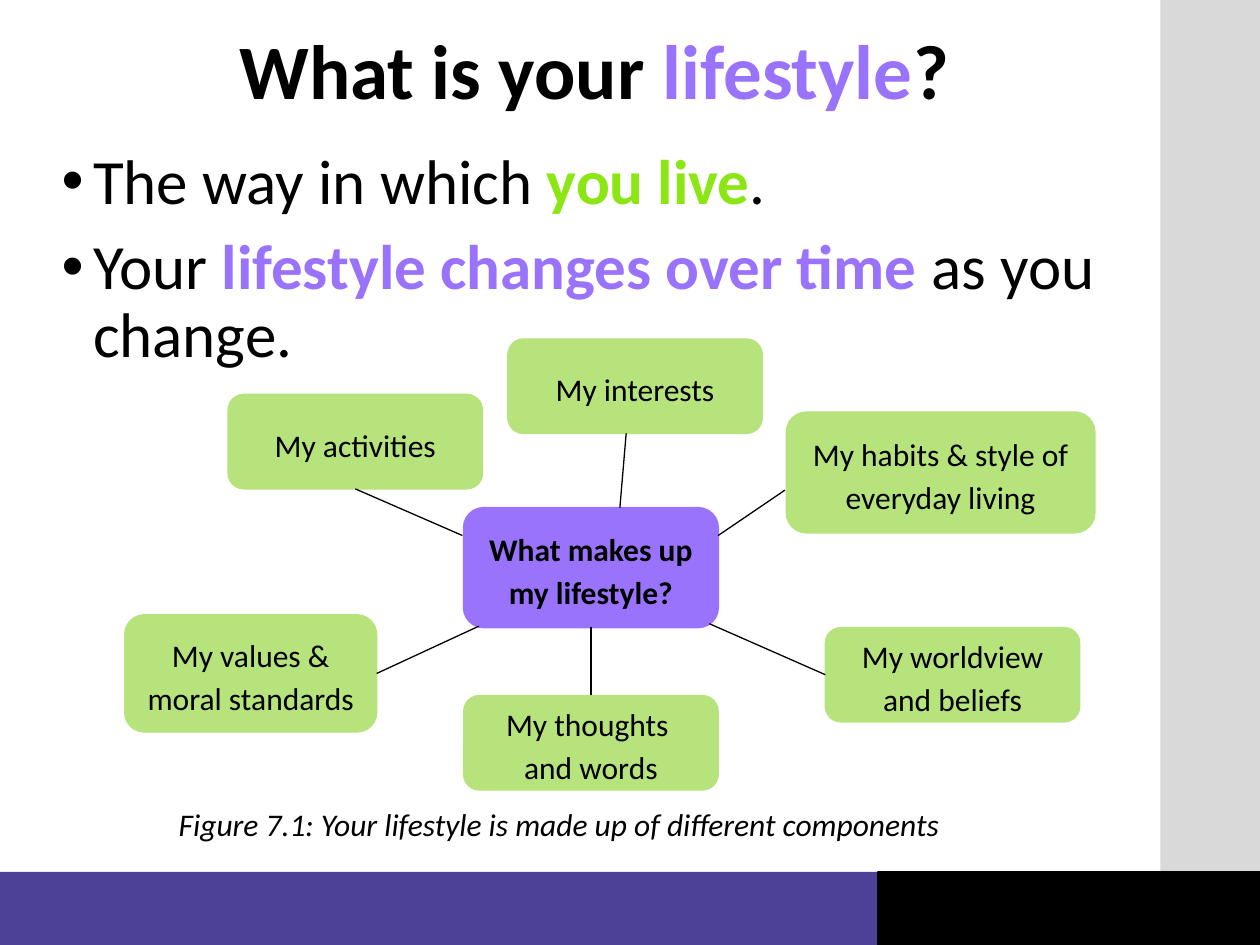
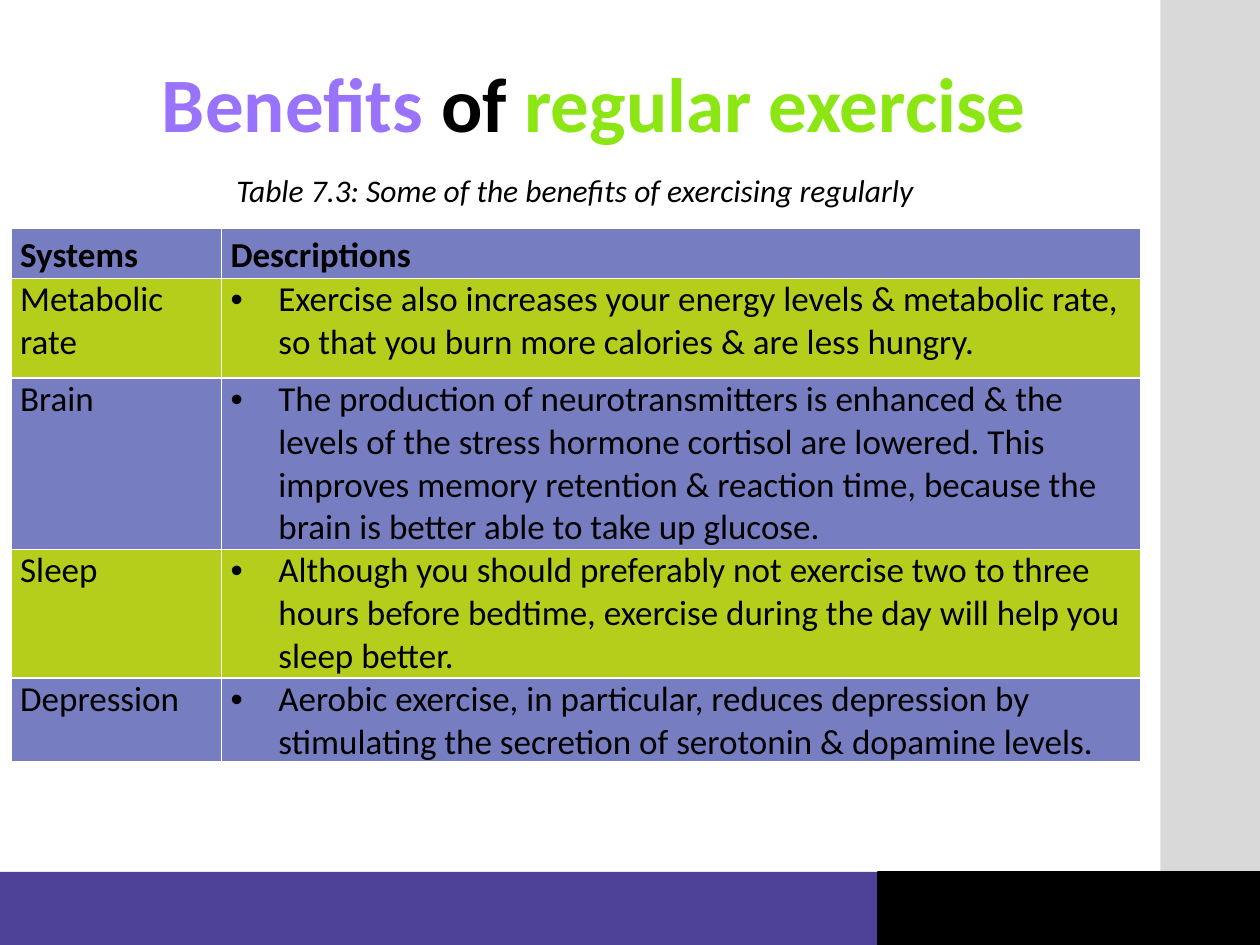
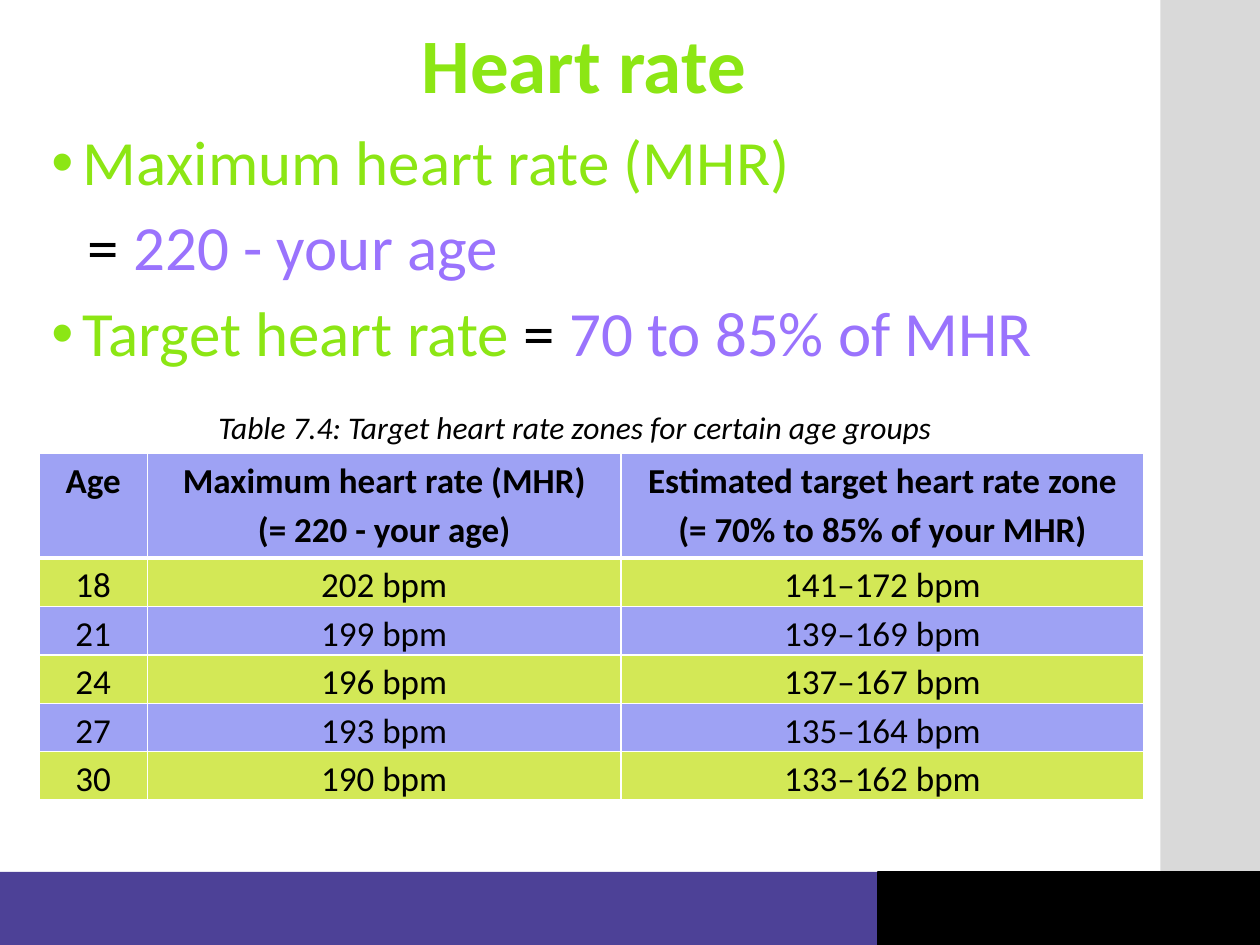
from dataclasses import dataclass

from lxml import etree
from pptx import Presentation
from pptx.dml.color import RGBColor
from pptx.enum.shapes import MSO_CONNECTOR, MSO_SHAPE
from pptx.enum.text import MSO_ANCHOR, PP_ALIGN
from pptx.oxml.ns import qn
from pptx.util import Inches, Pt

LEFT, MID = PP_ALIGN.LEFT, PP_ALIGN.CENTER
TOP, CORE = MSO_ANCHOR.TOP, MSO_ANCHOR.MIDDLE
RECT, ROUND = MSO_SHAPE.RECTANGLE, MSO_SHAPE.ROUNDED_RECTANGLE
LINE = MSO_CONNECTOR.STRAIGHT
NORTH, WEST, SOUTH, EAST = range(4)


@dataclass(frozen=True)
class Theme:
    font: str = "Calibri"
    ink: str = "000000"
    white: str = "FFFFFF"
    grey: str = "D9D9D9"
    band: str = "4D4197"
    violet: str = "9A73FD"
    lime: str = "8CE614"
    leaf: str = "B7E37D"
    dark_rows: tuple = ("767DC0", "B5CE1C")
    light_rows: tuple = ("9EA2F4", "D3E856")
    title: int = 44
    body: int = 36
    cell: int = 20
    note: int = 18


T = Theme()


def rgb(code):
    return RGBColor.from_string(code)


def inches(*sizes):
    return [Inches(size) for size in sizes]


def indent(para, left, bullet):
    props = para._p.get_or_add_pPr()
    props.set("marL", str(Inches(left)))
    props.set("indent", str(-Inches(left) if bullet else 0))
    if bullet:
        etree.SubElement(props, qn("a:buFont"), typeface="Arial")
        etree.SubElement(props, qn("a:buChar"), char="•")


def write(para, text, size, bold=False, italic=False, align=LEFT,
          space=1.0, left=0, bullet=False):
    """Fill a paragraph with a string or with (text, colour[, bold]) runs."""
    if left:
        indent(para, left, bullet)
    para.alignment, para.line_spacing = align, space
    font = para.font
    font.name, font.size = T.font, Pt(size)
    font.bold, font.italic = bold, italic
    font.color.rgb = rgb(T.ink)
    if isinstance(text, str):
        para.text = text
        return
    for words, color, *strong in text:
        run = para.add_run()
        run.text = words
        run.font.color.rgb = rgb(color)
        if strong:
            run.font.bold = strong[0]


def add_text(slide, box, anchor=TOP):
    frame = slide.shapes.add_textbox(*inches(*box)).text_frame
    frame.word_wrap = True
    frame.vertical_anchor = anchor
    return frame


def add_title(slide, box, runs):
    frame = add_text(slide, box, CORE)
    write(frame.paragraphs[0], runs, T.title, bold=True, align=MID, space=0.9)


def add_body(slide, box, items):
    """Add large text from (runs, left indent, bullet) items."""
    frame = add_text(slide, box)
    for i, (runs, left, bullet) in enumerate(items):
        para = frame.add_paragraph() if i else frame.paragraphs[0]
        write(para, runs, T.body, space=0.9, left=left, bullet=bullet)
        if i:
            para.space_before = Pt(10)


def add_note(slide, box, text, align=MID, space=1.0):
    frame = add_text(slide, box)
    write(frame.paragraphs[0], text, T.note, italic=True, align=align,
          space=space)


def add_block(slide, kind, box, color, edge=0):
    shape = slide.shapes.add_shape(kind, *inches(*box))
    shape.shadow.inherit = False
    shape.fill.solid()
    shape.fill.fore_color.rgb = rgb(color)
    if edge:
        shape.line.color.rgb = rgb(color)
        shape.line.width = Pt(edge)
    else:
        shape.line.fill.background()
    return shape


def add_node(slide, box, text, color=T.leaf, edge=0.75, bold=False):
    node = add_block(slide, ROUND, box, color, edge)
    frame = node.text_frame
    frame.word_wrap = True
    frame.vertical_anchor = CORE
    write(frame.paragraphs[0], text, T.note, bold=bold, align=MID, space=1.15)
    return node


def add_link(slide, start, end, color=T.ink, width=0.75):
    link = slide.shapes.add_connector(LINE, *inches(*start, *end))
    link.line.color.rgb = rgb(color)
    link.line.width = Pt(width)
    etree.SubElement(link._element.spPr, qn("a:effectLst"))
    return link


def add_edges(cell, top, bottom):
    props = cell._tc.get_or_add_tcPr()
    for side, width in zip("LRTB", (1, 1, top, bottom)):
        edge = etree.SubElement(props, qn("a:ln" + side), w=str(Pt(width)))
        fill = etree.SubElement(edge, qn("a:solidFill"))
        etree.SubElement(fill, qn("a:srgbClr"), val=T.white)


def add_grid(slide, spot, cols, heights, rows, fills, pad=0.0, rule=1,
             align=LEFT, space=1.0, listed=None):
    """Add a table; rule is the line under the head, listed a bulleted column."""
    size = (sum(cols), sum(heights))
    table = slide.shapes.add_table(
        len(rows), len(cols), *inches(*spot, *size)).table
    table.horz_banding = False
    for col, width in zip(table.columns, cols):
        col.width = Inches(width)
    for r, (row, height) in enumerate(zip(rows, heights)):
        table.rows[r].height = Inches(height)
        head = r == 0
        for c, text in enumerate(row):
            cell = table.cell(r, c)
            cell.margin_left = cell.margin_right = Inches(pad)
            cell.margin_top = cell.margin_bottom = 0
            add_edges(cell, rule if r == 1 else 1, rule if head else 1)
            cell.fill.solid()
            cell.fill.fore_color.rgb = rgb(fills[r % 2])
            dot = c == listed and not head
            for i, part in enumerate(text.split("\n")):
                frame = cell.text_frame
                para = frame.add_paragraph() if i else frame.paragraphs[0]
                write(para, part, T.cell, bold=head, align=align,
                      space=1.15 if head else space,
                      left=0.38 if dot else 0, bullet=dot)


def add_page(deck):
    slide = deck.slides.add_slide(deck.slide_layouts[6])
    add_block(slide, RECT, (9.21, -0.01, 0.79, 7.49), T.grey)
    add_block(slide, RECT, (0, 6.92, 10, 0.59), T.band)
    add_block(slide, RECT, (6.97, 6.92, 3.03, 0.58), T.ink, 1)
    return slide


def add_map(slide):
    hub = add_node(slide, (3.68, 4.03, 2.02, 0.95),
                   "What makes up my lifestyle?", T.violet, 1, True)
    # box, label, link start, link end at the hub, joined side
    topics = [
        ((1.81, 3.13, 2.02, 0.75), "My activities",
         (2.82, 3.88), (3.67, 4.25), SOUTH),
        ((0.99, 4.88, 2, 0.93), "My values & moral standards",
         (2.99, 5.35), (3.8, 4.97), EAST),
        ((3.68, 5.52, 2.02, 0.75), "My thoughts \vand words",
         (4.69, 5.52), (4.69, 4.98), NORTH),
        ((6.55, 4.98, 2.02, 0.75), "My worldview and beliefs",
         (6.55, 5.35), (5.63, 4.95), WEST),
        ((6.24, 3.27, 2.45, 0.96), "My habits & style of everyday living",
         (6.23, 3.89), (5.7, 4.25), None),
        ((4.03, 2.69, 2.02, 0.75), "My interests",
         (4.97, 3.44), (4.92, 4.03), None),
    ]
    for box, label, start, end, side in topics:
        node = add_node(slide, box, label)
        link = add_link(slide, start, end)
        if side is not None:
            link.begin_connect(node, side)
        if side == NORTH:
            link.end_connect(hub, SOUTH)


def add_rules(slide):
    """Draw the white frame lines that lie under the benefits table."""
    left, right = 0.18, 9.03
    for y, width in ((1.94, 3), (4.55, 1), (5.45, 1)):
        add_link(slide, (left, y), (right, y), T.white, width)
    for x in (left, right):
        add_link(slide, (x, 1.41), (x, 6.73), T.white, 1)
    for y in (1.94, 5.45):
        add_link(slide, (right, y), (left, y), T.white, 2.25)


def lifestyle(deck):
    slide = add_page(deck)
    add_title(slide, (0.39, 0.33, 8.65, 0.53), [
        ("What is your ", T.ink), ("lifestyle", T.violet), ("?", T.ink)])
    add_body(slide, (0.39, 1.14, 8.65, 1.71), [
        ([("The way in which ", T.ink), ("you live", T.lime, True),
          (".", T.ink)], 0.25, True),
        ([("Your ", T.ink), ("lifestyle changes over time ", T.violet, True),
          ("as you change.", T.ink)], 0.25, True)])
    add_note(slide, (1.32, 6.34, 7.58, 0.4),
             "Figure 7.1: Your lifestyle is made up of different components",
             LEFT)
    add_map(slide)


def benefits(deck):
    slide = add_page(deck)
    add_title(slide, (0.39, 0.46, 8.65, 0.79), [
        ("Benefits", T.violet), (" of ", T.ink), ("regular exercise", T.lime)])
    add_note(slide, (0.17, 1.34, 8.79, 0.39),
             "Table 7.3: Some of the benefits of exercising regularly",
             space=0.9)
    add_rules(slide)
    rows = [
        ("Systems", "Descriptions"),
        ("Metabolic rate",
         "Exercise also increases your energy levels & metabolic rate, "
         "so that you burn more calories & are less hungry."),
        ("Brain",
         "The production of neurotransmitters is enhanced & the levels of "
         "the stress hormone cortisol are lowered. This improves memory "
         "retention & reaction time, because the brain is better able to "
         "take up glucose."),
        ("Sleep",
         "Although you should preferably not exercise two to three hours "
         "before bedtime, exercise during the day will help you sleep "
         "better."),
        ("Depression",
         "Aerobic exercise, in particular, reduces depression by "
         "stimulating the secretion of serotonin & dopamine levels."),
    ]
    add_grid(slide, (0.09, 1.81), (1.67, 7.29), (0.4, 0.79, 1.36, 1.02, 0.67),
             rows, T.dark_rows, pad=0.07, listed=1)


def heart(deck):
    slide = add_page(deck)
    add_title(slide, (0.31, 0.15, 8.65, 0.79), [("Heart rate", T.lime)])
    add_body(slide, (0.31, 0.99, 8.77, 1.27), [
        ([("Maximum heart rate (MHR)", T.lime)], 0.25, True),
        ([("= ", T.ink), ("220 - your age", T.violet)], 0.29, False),
        ([("Target heart rate ", T.lime), ("= ", T.ink),
          ("70 to 85% of MHR", T.violet)], 0.25, True)])
    add_note(slide, (0.31, 3.19, 8.51, 0.4),
             "Table 7.4: Target heart rate zones for certain age groups")
    zones = {18: "141–172", 21: "139–169", 24: "137–167",
             27: "135–164", 30: "133–162"}
    rows = [("Age", "Maximum heart rate (MHR)\n(= 220 - your age)",
             "Estimated target heart rate zone\n(= 70% to 85% of your MHR)")]
    rows += [(str(age), f"{220 - age} bpm", f"{zone} bpm")
             for age, zone in zones.items()]
    add_grid(slide, (0.31, 3.6), (0.86, 3.76, 4.15),
             [0.83] + [0.38] * len(zones), rows, T.light_rows, rule=3,
             align=MID, space=1.15)


def main():
    deck = Presentation()
    deck.slide_width, deck.slide_height = inches(10, 7.5)
    lifestyle(deck)
    benefits(deck)
    heart(deck)
    deck.save("out.pptx")


if __name__ == "__main__":
    main()
